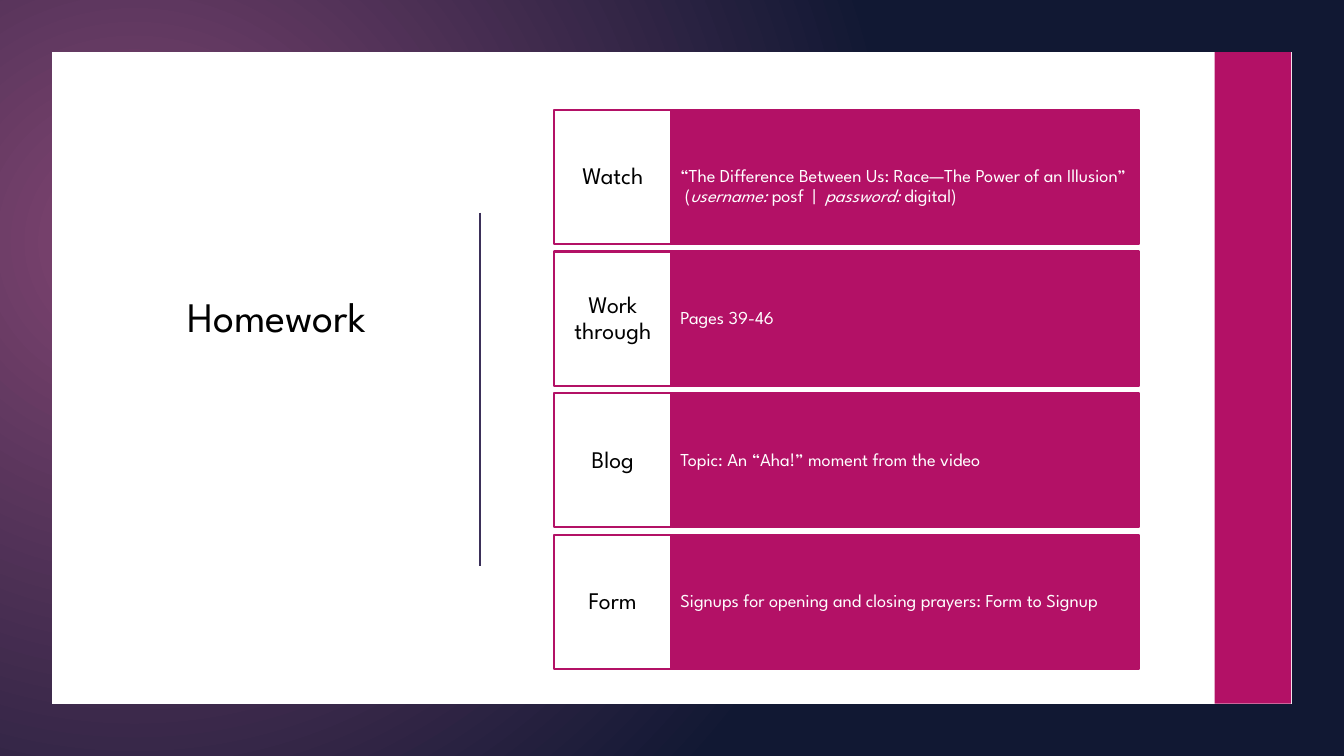
from lxml import etree
from pptx import Presentation
from pptx.dml.color import RGBColor
from pptx.enum import shapes, text
from pptx.oxml import ns
from pptx.util import Pt

FONT = "League Spartan"
MAGENTA, WHITE, BLACK = "B31166", "FFFFFF", "000000"
PLUM, NAVY, VIOLET = "814572", "111833", "3B3059"
WIDTH, HEIGHT, MARGIN = 960, 540, 37.4

# Each task: label, then (words, italic) spans; "\n" stands for a line break
TASKS = [
    ("Watch", [("\n", False),
               ("“The Difference Between Us: Race—The Power of an Illusion”  (", False),
               ("username: ", True), ("posf  |  ", False),
               ("password:", True), (" digital)", False)]),
    ("Work through", [("Pages 39-46", False)]),
    ("Blog", [("Topic: An “Aha!” moment from the video", False)]),
    ("Form", [("Signups for opening and closing prayers: Form to Signup", False)]),
]


def colour(value):
    return RGBColor.from_string(value)


def add_spans(para, spans, size, ink):
    for words, italic in spans:
        if words == "\n":
            para.add_line_break()
            continue
        span = para.add_run()
        span.text = words
        span.font.name = FONT
        span.font.size = Pt(size)
        span.font.italic = italic
        span.font.color.rgb = colour(ink)
    para.font.size = Pt(size)


def add_box(page, left, top, width, height, fill, line=None):
    box = page.shapes.add_shape(shapes.MSO_SHAPE.RECTANGLE,
                                Pt(left), Pt(top), Pt(width), Pt(height))
    box.shadow.inherit = False
    box.fill.solid()
    box.fill.fore_color.rgb = colour(fill)
    if line:
        box.line.color.rgb = colour(line)
        box.line.width = Pt(1.5)
    else:
        box.line.fill.background()
    return box


def fill_text(box, spans, size, ink, align, inset_x, inset_y):
    frame = box.text_frame
    frame.word_wrap = True
    frame.vertical_anchor = text.MSO_ANCHOR.MIDDLE
    frame.margin_left = frame.margin_right = Pt(inset_x)
    frame.margin_top = frame.margin_bottom = Pt(inset_y)
    para = frame.paragraphs[0]
    para.alignment = align
    para.line_spacing = 0.9
    add_spans(para, spans, size, ink)


def add_frame(page):
    """Gradient border around the page, with a rectangular opening."""
    right, bottom = WIDTH - MARGIN, HEIGHT - MARGIN
    builder = page.shapes.build_freeform(0, 0, scale=Pt(1))
    builder.add_line_segments([(0, HEIGHT), (WIDTH, HEIGHT), (WIDTH, 0)])
    builder.move_to(right, bottom)
    builder.add_line_segments([(MARGIN, bottom), (MARGIN, MARGIN), (right, MARGIN)])
    border = builder.convert_to_shape()
    border.shadow.inherit = False
    border.line.fill.background()
    border.fill.gradient()
    for stop, value in zip(border.fill.gradient_stops, (PLUM, NAVY)):
        stop.color.rgb = colour(value)
    # Turn the linear gradient into a radial one
    linear = border.element.spPr.find(".//" + ns.qn("a:lin"))
    radial = etree.Element(ns.qn("a:path"), path="circle")
    etree.SubElement(radial, ns.qn("a:fillToRect"),
                     l="45000", t="65000", r="125000", b="100000")
    linear.getparent().replace(linear, radial)


def add_divider(page, x, top, bottom):
    line = page.shapes.add_connector(shapes.MSO_CONNECTOR.STRAIGHT,
                                     Pt(x), Pt(top), Pt(x), Pt(bottom))
    line.line.color.rgb = colour(VIOLET)
    line.line.width = Pt(1.25)
    etree.SubElement(line.element.spPr, ns.qn("a:effectLst"))


def add_task(page, top, label, spans):
    left, label_width, detail_width, height = 396, 83.5, 334, 95.8
    detail = add_box(page, left + label_width, top, detail_width, height, MAGENTA, MAGENTA)
    fill_text(detail, spans, 13, WHITE, text.PP_ALIGN.LEFT, 6.5, 24.5)
    name = add_box(page, left, top, label_width, height, WHITE, MAGENTA)
    fill_text(name, [(label, False)], 17, BLACK, text.PP_ALIGN.CENTER, 4.3, 9.4)


def set_title(page, words):
    title = page.shapes.title
    title.left, title.top, title.width, title.height = Pt(111.6), Pt(203.8), Pt(172), Pt(44)
    frame = title.text_frame
    frame.word_wrap = False
    frame.auto_size = text.MSO_AUTO_SIZE.SHAPE_TO_FIT_TEXT
    frame.vertical_anchor = text.MSO_ANCHOR.TOP
    para = frame.paragraphs[0]
    para.alignment = text.PP_ALIGN.CENTER
    add_spans(para, [(words, False)], 30, BLACK)


def main():
    deck = Presentation()
    deck.slide_width, deck.slide_height = Pt(WIDTH), Pt(HEIGHT)
    page = deck.slides.add_slide(deck.slide_layouts[5])
    page.background.fill.solid()
    page.background.fill.fore_color.rgb = colour(WHITE)

    # Side bar and border
    add_box(page, 867.6, 36.8, 54.7, 465.8, MAGENTA)
    add_frame(page)

    # Title and divider
    set_title(page, "Homework")
    add_divider(page, 342.8, 151.8, 404.2)

    # Task rows
    for row, (label, spans) in enumerate(TASKS):
        add_task(page, 78.5 + row * 101.2, label, spans)

    deck.save("out.pptx")


if __name__ == "__main__":
    main()
